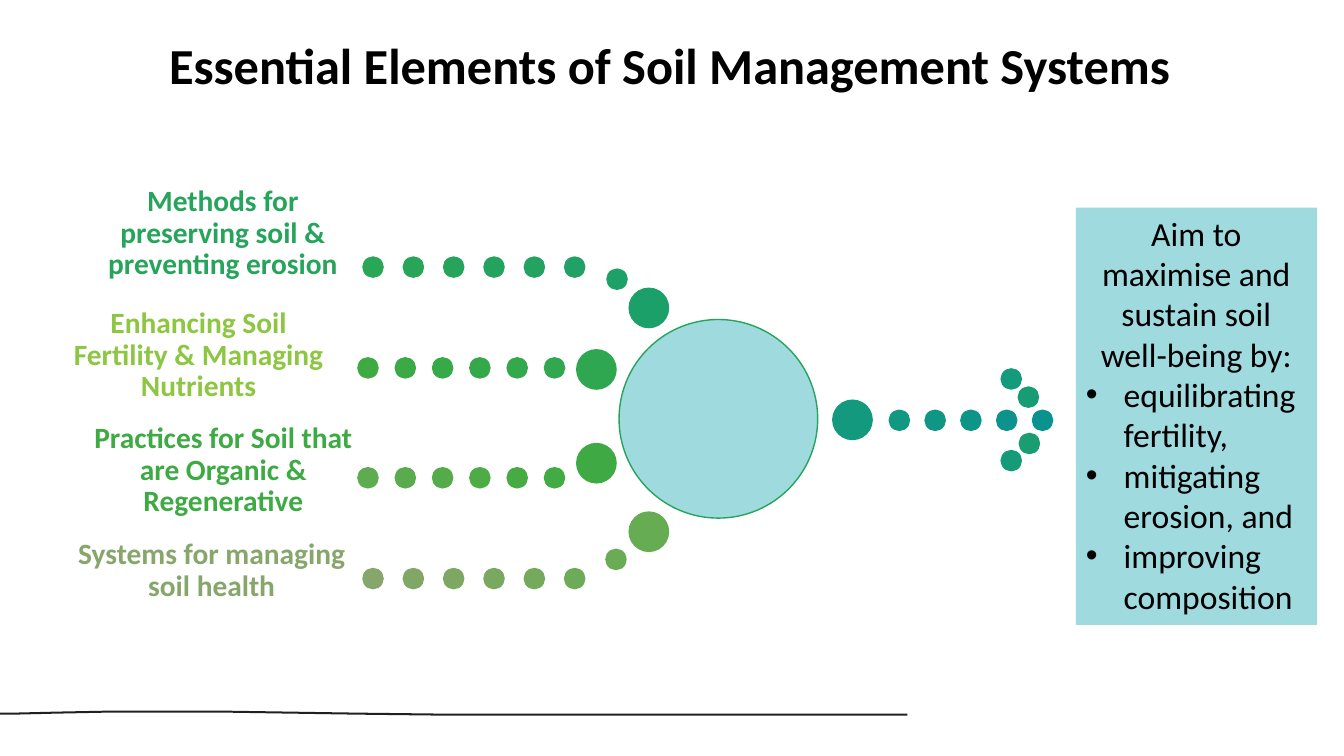
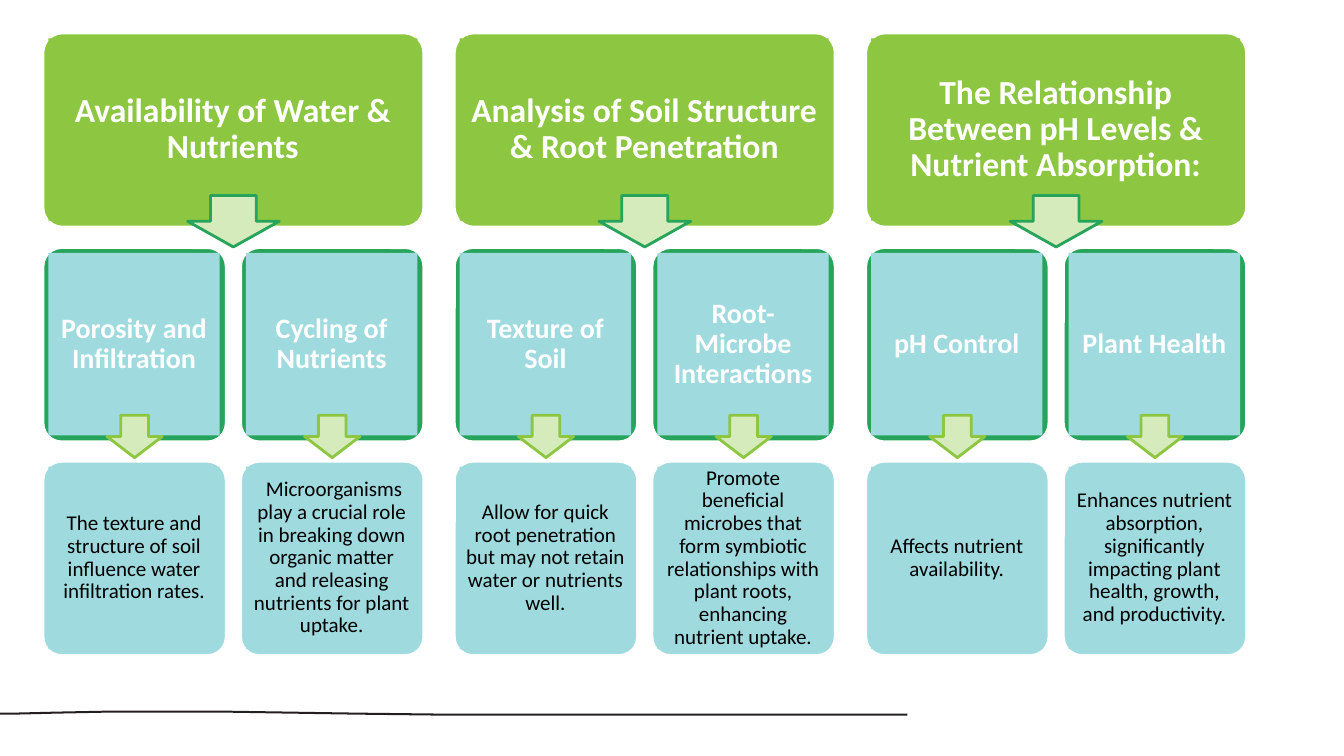
import pptx
import pptx.util
import pptx.dml.color
import pptx.enum.shapes
import pptx.enum.text
import pptx.oxml.ns
import lxml.etree

Inches = pptx.util.Inches
Pt = pptx.util.Pt
KIND = pptx.enum.shapes.MSO_SHAPE
ALIGN = pptx.enum.text.PP_ALIGN
ANCHOR = pptx.enum.text.MSO_ANCHOR

FONT = "Calibri"
HUES = {
    "ink": "000000", "white": "FFFFFF", "rule": "231F20",
    "aqua": "9FDADF", "green": "26A45B", "lime": "8DC641",
    "leaf": "3DAA44", "sage": "86A66B", "pale": "D6EBBB",
}
# Dot shades run from the hub outward.
SHADES = {
    "erosion": "1CA06A 1EA168 21A165 23A261 24A35F 26A45B 28A558 2AA657",
    "nutrients": "2FA751 31A74F 33A84C 35A94A 37AA48 3BA946 3DAA44",
    "organic": "3FAA44 42AB43 47AB44 4EAC46 53AC49 59AB4D 5FAB4F",
    "health": "65AC52 6AAB55 6EAB58 75AA5C 79A861 7EA764 81A767 86A66B",
    "aim": "12997E 119881 0F9685 0E9588 0D938B 0A938E "
           "139B7C 169B78 189C74 199D71",
}
BIG, SMALL = 0.39, 0.2

AIM = ["Aim to maximise and sustain soil well-being by:",
       "equilibrating fertility,", "mitigating erosion, and",
       "improving composition"]

TOPICS = [
    ("Availability of Water & Nutrients", [
        ("Porosity and Infiltration",
         "The texture and structure of soil influence water "
         "infiltration rates."),
        ("Cycling of Nutrients",
         " Microorganisms play a crucial role in breaking down organic "
         "matter and releasing nutrients for plant uptake."),
    ]),
    ("Analysis of Soil Structure & Root Penetration", [
        ("Texture of Soil",
         "Allow for quick root penetration but may not retain water or "
         "nutrients well."),
        ("Root-Microbe Interactions",
         "Promote beneficial microbes that form symbiotic relationships "
         "with plant roots, enhancing nutrient uptake."),
    ]),
    ("The Relationship Between pH Levels & Nutrient Absorption:", [
        ("pH Control", "Affects nutrient availability."),
        ("Plant Health",
         "Enhances nutrient absorption, significantly impacting plant "
         "health, growth, and productivity."),
    ]),
]


def color(code):
    return pptx.dml.color.RGBColor.from_string(code)


def paint(shape, fill, line=None, width=1):
    """Set a plain fill and an outline, or no outline at all."""
    shape.shadow.inherit = False
    shape.fill.solid()
    shape.fill.fore_color.rgb = color(fill)
    if line:
        shape.line.color.rgb = color(line)
        shape.line.width = Pt(width)
    else:
        shape.line.fill.background()


def draw(slide, kind, box, fill, line=None, width=1):
    shape = slide.shapes.add_shape(kind, *map(Inches, box))
    paint(shape, fill, line, width)
    return shape


def place(shape, box):
    shape.left, shape.top, shape.width, shape.height = map(Inches, box)


def write(shape, *lines, size=20, hue="ink", bold=False, align=ALIGN.CENTER,
          anchor=ANCHOR.MIDDLE, inset=(0.1, 0.05), gap=1.0):
    """Fill a shape with one paragraph per line, all in one format."""
    frame = shape.text_frame
    frame.word_wrap = True
    frame.auto_size = pptx.enum.text.MSO_AUTO_SIZE.NONE
    frame.vertical_anchor = anchor
    frame.margin_left = frame.margin_right = Inches(inset[0])
    frame.margin_top = frame.margin_bottom = Inches(inset[1])
    for i, line in enumerate(lines):
        para = frame.paragraphs[0] if i == 0 else frame.add_paragraph()
        para.alignment = align
        para.line_spacing = gap
        para.space_before = Pt(0)
        run = para.add_run()
        run.text = line
        run.font.name = FONT
        run.font.size = Pt(size)
        run.font.bold = bold
        run.font.color.rgb = color(HUES[hue])


def footer(slide):
    """Draw the thin wavy rule at the foot of the slide."""
    top = [(0, 7.07), (0.14, 7.07), (0.55, 7.06), (1.07, 7.05), (2.23, 7.05),
           (3.54, 7.07), (4.43, 7.08), (9, 7.08)]
    under = [(x, y + 0.02) for x, y in reversed(top)]
    points = [(Inches(x), Inches(y)) for x, y in top + under]
    pen = slide.shapes.build_freeform(*points[0])
    pen.add_line_segments(points[1:], close=True)
    paint(pen.convert_to_shape(), HUES["rule"])


def start(deck, layout):
    slide = deck.slides.add_slide(deck.slide_layouts[layout])
    footer(slide)
    return slide


def dots(slide, key, hub, spots):
    """Draw a big dot at hub, then small ones at spots, shade by shade."""
    sizes = [BIG] + [SMALL] * len(spots)
    for shade, (x, y), size in zip(SHADES[key].split(), [hub] + spots, sizes):
        draw(slide, KIND.OVAL, (x, y, size, size), shade, shade)


def trail(left, step, y):
    """Give six even dot places, from right to left."""
    return [(left + step * i, y) for i in reversed(range(6))]


def label(slide, text, hue, x, y, width=2.74):
    box = slide.shapes.add_textbox(*map(Inches, (x, y, width, 0.49)))
    write(box, text, size=21, hue=hue, bold=True, anchor=ANCHOR.BOTTOM,
          inset=(0, 0), gap=0.9)


def panel(slide):
    """Turn the body placeholder into the box with the aims."""
    body = slide.placeholders[1]
    place(body, (10.67, 2.06, 2.39, 4.14))
    body.fill.solid()
    body.fill.fore_color.rgb = color(HUES["aqua"])
    write(body, *AIM, size=24, align=ALIGN.LEFT, anchor=ANCHOR.TOP)
    intro = body.text_frame.paragraphs[0]
    intro.alignment = ALIGN.CENTER
    props = intro._p.get_or_add_pPr()
    props.set("marL", "0")
    props.set("indent", "0")
    lxml.etree.SubElement(props, pptx.oxml.ns.qn("a:buNone"))


def systems(deck):
    slide = start(deck, 1)
    title = slide.shapes.title
    place(title, (0.73, 0.28, 11.83, 0.71))
    write(title, "Essential Elements of Soil Management Systems",
          size=36, bold=True)

    draw(slide, KIND.OVAL, (6.14, 3.17, 1.97, 1.97),
         HUES["aqua"], HUES["green"])
    dots(slide, "erosion", (6.24, 2.86),
         [(6.02, 2.67)] + trail(3.6, 0.4, 2.55))
    dots(slide, "nutrients", (5.72, 3.47), trail(3.55, 0.37, 3.55))
    dots(slide, "organic", (5.72, 4.4), trail(3.55, 0.37, 4.64))
    dots(slide, "health", (6.24, 5.08),
         [(6.01, 5.45)] + trail(3.6, 0.4, 5.64))
    shaft = [(8.82 + 0.355 * i, 4.07) for i in range(5)]
    tip = [(9.93, 3.66), (9.93, 4.47), (10.1, 3.84), (10.11, 4.3)]
    dots(slide, "aim", (8.26, 3.97), shaft + tip)

    label(slide, "Methods for preserving soil & preventing erosion",
          "green", 0.84, 2.3)
    label(slide, "Enhancing Soil Fertility & Managing Nutrients",
          "lime", 0.6, 3.51)
    label(slide, "Practices for Soil that are Organic & Regenerative",
          "leaf", 0.8, 4.65, 2.83)
    label(slide, "Systems for managing soil health", "sage", 0.73, 5.49)
    panel(slide)


def card(slide, box, rim, face, text, **form):
    """Draw a rounded card with a square text face inside its rim."""
    x, y, w, h = box
    back = draw(slide, KIND.ROUNDED_RECTANGLE, box, HUES[rim],
                HUES["white"], 1.5)
    back.adjustments[0] = 0.1
    front = draw(slide, KIND.RECTANGLE,
                 (x + 0.05, y + 0.05, w - 0.11, h - 0.11), HUES[face])
    write(front, text, gap=0.9, **form)


def arrow(slide, box, line):
    draw(slide, KIND.DOWN_ARROW, box, HUES["pale"], HUES[line], 2)


def topics(deck):
    slide = start(deck, 6)
    wide, slim, high = 3.77, 1.81, 1.92
    for i, (head, parts) in enumerate(TOPICS):
        left = 0.43 + 4.08 * i
        card(slide, (left, 0.33, wide, high), "lime", "lime", head,
             size=24, hue="white", bold=True, inset=(0.07, 0.07))
        for j, (name, note) in enumerate(parts):
            x = left + 1.96 * j
            card(slide, (x, 2.46, slim, high), "green", "aqua", name,
                 size=20, hue="white", bold=True, inset=(0.07, 0.07))
            card(slide, (x, 4.58, slim, high), "aqua", "aqua", note,
                 size=15, inset=(0.06, 0.06))
            arrow(slide, (x + 0.63, 4.12, 0.55, 0.42), "lime")
        arrow(slide, (left + 1.43, 1.94, 0.91, 0.51), "green")


def main():
    deck = pptx.Presentation()
    deck.slide_width = Inches(13.33)
    deck.slide_height = Inches(7.5)
    systems(deck)
    topics(deck)
    deck.save("out.pptx")


if __name__ == "__main__":
    main()
